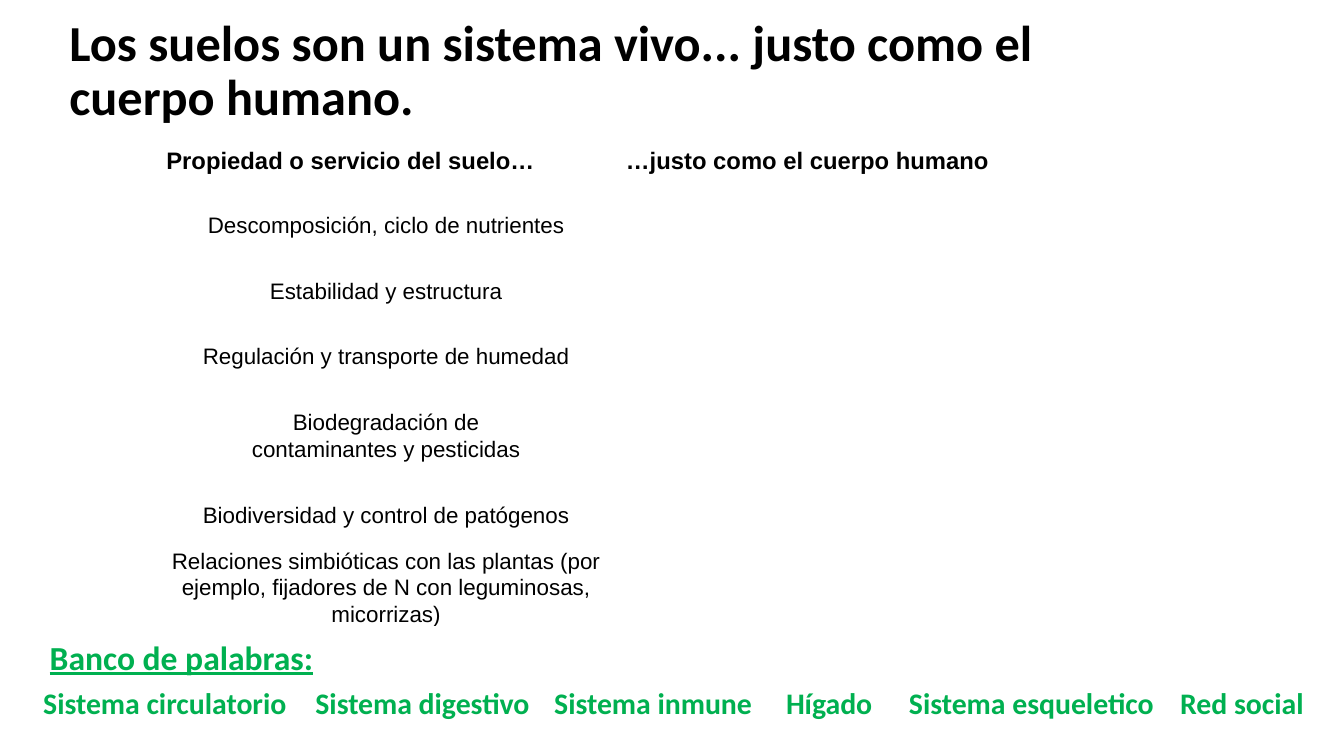
"""Build a slide that compares soil functions with the systems of the human body."""
import pptx
import pptx.dml.color
import pptx.enum.text
import pptx.util

Pt = pptx.util.Pt
ALIGN = pptx.enum.text.PP_ALIGN
ANCHOR = pptx.enum.text.MSO_ANCHOR
AUTO_SIZE = pptx.enum.text.MSO_AUTO_SIZE
BLACK = pptx.dml.color.RGBColor(0x00, 0x00, 0x00)
GREEN = pptx.dml.color.RGBColor(0x00, 0xB0, 0x50)

TITLE = {"name": "Calibri", "size": Pt(36), "bold": True, "color": BLACK}
HEADER = {"name": "Arial", "size": Pt(17), "bold": True, "color": BLACK}
BODY = {"name": "Arial", "size": Pt(16), "bold": False, "color": BLACK}
WORD = {"name": "Calibri", "size": Pt(21.3), "bold": True, "color": GREEN}
BANK = WORD | {"size": Pt(24), "underline": True}

HEADINGS = ["Propiedad o servicio del suelo…", "…justo como el cuerpo humano"]
PROPERTIES = [
    "Descomposición, ciclo de nutrientes",
    "Estabilidad y estructura",
    "Regulación y transporte de humedad",
    "Biodegradación de\ncontaminantes y pesticidas",
    "Biodiversidad y control de patógenos",
    "Relaciones simbióticas con las plantas (por ejemplo, fijadores de N con "
    "leguminosas, micorrizas)",
]
COLUMN_WIDTHS = [328.3, 450.7]
ROW_HEIGHTS = [46.8] * 4 + [66.2, 46.8, 56.9]
WORDS = [
    ("Sistema circulatorio", 23.8, 203.8),
    ("Sistema digestivo", 218.2, 183.6),
    ("Sistema inmune", 388.8, 157.7),
    ("Hígado", 554.4, 98.6),
    ("Sistema esqueletico", 642.2, 193),
    ("Red social", 835.9, 116.6),
]


class SlideBuilder:
    def __init__(self, presentation):
        self.slide = presentation.slides.add_slide(presentation.slide_layouts[6])

    def fill_frame(self, frame, text, style, **layout):
        frame.text = text
        for paragraph in frame.paragraphs:
            for name, value in layout.items():
                setattr(paragraph, name, value)
            for name, value in style.items():
                if name == "color":
                    paragraph.font.color.rgb = value
                else:
                    setattr(paragraph.font, name, value)

    def text(self, text, box, style, anchor=ANCHOR.TOP, grow=True, **layout):
        shape = self.slide.shapes.add_textbox(*map(Pt, box))
        frame = shape.text_frame
        frame.word_wrap = True
        frame.vertical_anchor = anchor
        frame.auto_size = AUTO_SIZE.SHAPE_TO_FIT_TEXT if grow else AUTO_SIZE.NONE
        self.fill_frame(frame, text, style, **layout)

    def table(self, left, top, widths, heights, headings, labels):
        box = (left, top, sum(widths), sum(heights))
        table = self.slide.shapes.add_table(
            len(heights), len(widths), *map(Pt, box)).table
        table.first_row = table.horz_banding = False
        for column, width in zip(table.columns, widths):
            column.width = Pt(width)
        for row, height in zip(table.rows, heights):
            row.height = Pt(height)
        for cell in table.iter_cells():
            cell.fill.background()
            cell.vertical_anchor = ANCHOR.MIDDLE
            cell.margin_top = cell.margin_bottom = Pt(0)
        for index, heading in enumerate(headings):
            self.fill_frame(table.cell(0, index).text_frame, heading, HEADER,
                            line_spacing=1.07)
        for index, label in enumerate(labels, 1):
            self.fill_frame(table.cell(index, 0).text_frame, label, BODY,
                            alignment=ALIGN.CENTER, line_spacing=1.07)


def main():
    presentation = pptx.Presentation()
    presentation.slide_width = Pt(960)
    presentation.slide_height = Pt(540)
    builder = SlideBuilder(presentation)
    builder.text("Los suelos son un sistema vivo... justo como el cuerpo humano.",
                 (42.5, 32.4, 802.8, 38.2), TITLE, ANCHOR.MIDDLE, False,
                 line_spacing=0.9)
    builder.table(111.6, 90.7, COLUMN_WIDTHS, ROW_HEIGHTS, HEADINGS, PROPERTIES)
    builder.text("Banco de palabras:", (-13.7, 449.3, 286.6, 36.7), BANK,
                 alignment=ALIGN.CENTER, line_spacing=1.07)
    for word, left, width in WORDS:
        builder.text(word, (left, 485.3, width, 33.1), WORD)
    presentation.save("out.pptx")


if __name__ == "__main__":
    main()
